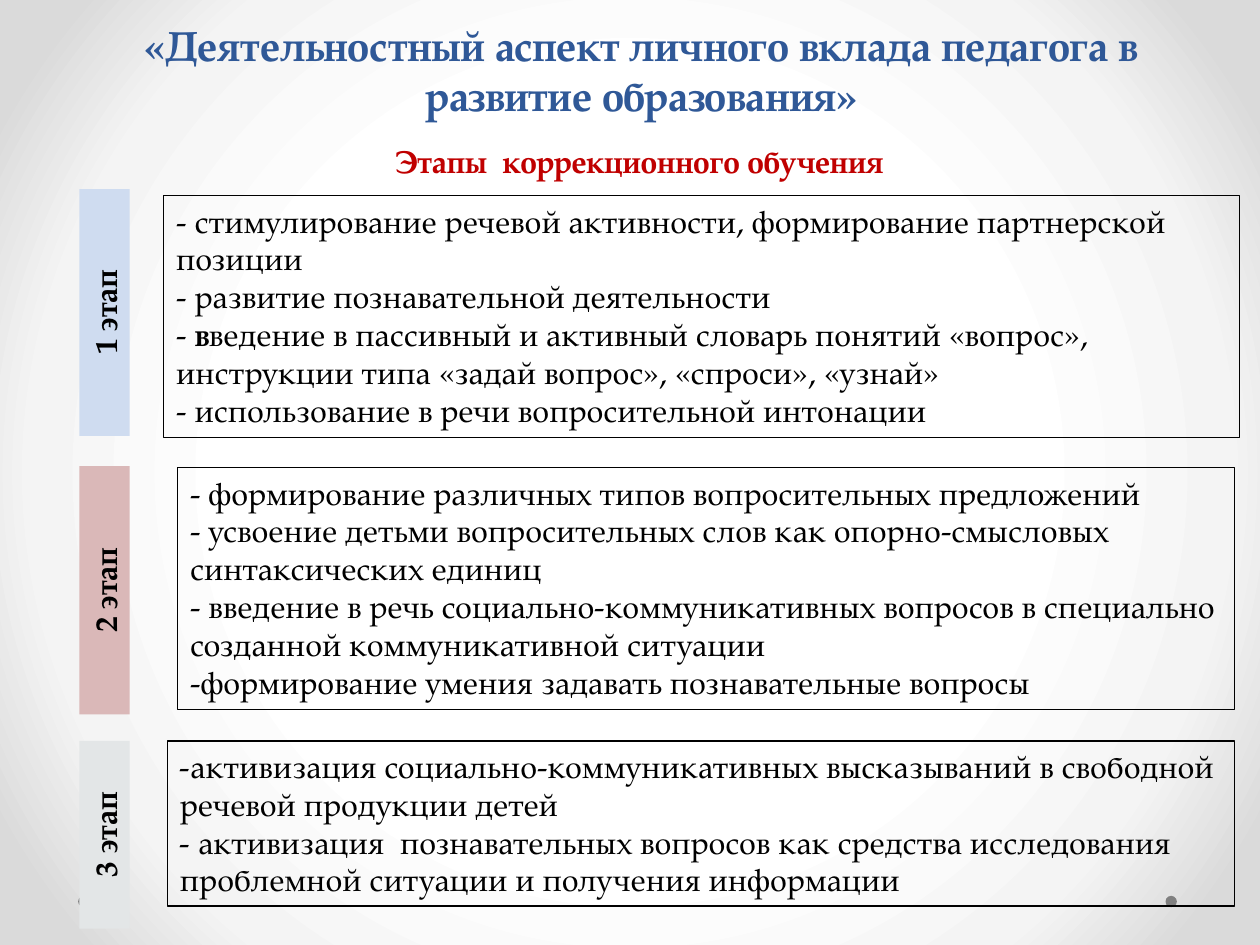
from pptx import Presentation
from pptx.dml.color import RGBColor
from pptx.enum import shapes, text
from pptx.oxml import parse_xml
from pptx.oxml.ns import nsdecls
from pptx.util import Inches, Pt

FONT = "TeX Gyre Pagella"
TITLE = "«Деятельностный аспект личного вклада педагога в развитие образования»"
SUB = "Этапы  коррекционного обучения"
STOPS = [(50, "FFFFFF"), (76, "F4F4F4"), (92, "DADADA")]
DOTS = [0.62, 9.25]
TAB = dict(mid=0.83, wide=0.4)
STAGES = [
    dict(name="1 этап", fill="CFDCF0", tab=(1.5, 1.96), box=(1.3, 1.55, 8.54, 1.92), goals=[
        "- стимулирование речевой активности, формирование партнерской позиции",
        "- развитие познавательной деятельности",
        "- *в*ведение в пассивный и активный словарь понятий «вопрос», "
        "инструкции типа «задай вопрос», «спроси», «узнай»",
        "- использование в речи вопросительной интонации"]),
    dict(name="2 этап", fill="DAB8B8", tab=(3.7, 1.97), box=(1.41, 3.71, 8.39, 1.92), goals=[
        "- формирование различных типов вопросительных предложений",
        "- усвоение детьми вопросительных слов как опорно-смысловых синтаксических единиц",
        "- введение в речь социально-коммуникативных вопросов "
        "в специально созданной коммуникативной ситуации",
        "-формирование умения задавать познавательные вопросы"]),
    dict(name="3 этап", fill="E3E6E7", tab=(5.88, 1.49), box=(1.33, 5.88, 8.47, 1.31), goals=[
        "-активизация социально-коммуникативных высказываний в свободной речевой продукции детей",
        "- активизация  познавательных вопросов как средства исследования "
        "проблемной ситуации и получения информации"]),
]


def color(code):
    return RGBColor.from_string(code)


def write(shape, lines, size=18, ink="000000", bold=False, align="LEFT", anchor="TOP"):
    frame = shape.text_frame
    frame.word_wrap = True
    frame.vertical_anchor = text.MSO_ANCHOR[anchor]
    for i, line in enumerate(lines):
        para = frame.add_paragraph() if i else frame.paragraphs[0]
        para.alignment = text.PP_ALIGN[align]
        for j, part in enumerate(line.split("*")):
            run = para.add_run()
            run.text = part
            style = dict(name=FONT, size=Pt(size), bold=bold or j % 2 == 1)
            for key, value in style.items():
                setattr(run.font, key, value)
            run.font.color.rgb = color(ink)


def draw(kind, place, fill=None, line=None):
    shape = slide.shapes.add_shape(shapes.MSO_SHAPE[kind], *map(Inches, place))
    shape.shadow.inherit = False
    if fill:
        shape.fill.solid()
        shape.fill.fore_color.rgb = color(fill)
    else:
        shape.fill.background()
    if line:
        shape.line.color.rgb = color(line)
        shape.line.width = Pt(0.75)
    else:
        shape.line.fill.background()
    return shape


def label(place, line, **style):
    box = slide.shapes.add_textbox(*map(Inches, place))
    write(box, [line], bold=True, align="CENTER", **style)


def shade():
    fill = slide.background.fill
    fill.solid()
    fill.fore_color.rgb = color("FFFFFF")
    stops = "".join(f'<a:gs pos="{pos * 1000}"><a:srgbClr val="{code}"/></a:gs>'
                    for pos, code in STOPS)
    grad = parse_xml(
        f'<a:gradFill {nsdecls("a")} rotWithShape="1"><a:gsLst>{stops}</a:gsLst>'
        '<a:path path="circle"><a:fillToRect l="50000" t="50000" r="50000" b="50000"/>'
        '</a:path></a:gradFill>')
    props = slide.background._cSld.bg.bgPr
    props.replace(props[0], grad)


deck = Presentation()
deck.slide_width, deck.slide_height = Inches(10), Inches(7.5)
slide = deck.slides.add_slide(deck.slide_layouts[6])
shade()

for left in DOTS:
    draw("OVAL", (left, 7.11, 0.09, 0.09), fill="808080")
label((0.59, 0.21, 9, 0.79), TITLE, size=24, ink="2F5897", anchor="BOTTOM")
label((0.47, 1.08, 9.21, 0.4), SUB, ink="C00000")

for stage in STAGES:
    top, long = stage["tab"]
    wide = TAB["wide"]
    place = (TAB["mid"] - long / 2, top + (long - wide) / 2, long, wide)
    tab = draw("RECTANGLE", place, fill=stage["fill"])
    tab.rotation = 270
    write(tab, [stage["name"]], bold=True, align="CENTER")
    write(draw("RECTANGLE", stage["box"], line="000000"), stage["goals"])

deck.save("out.pptx")
